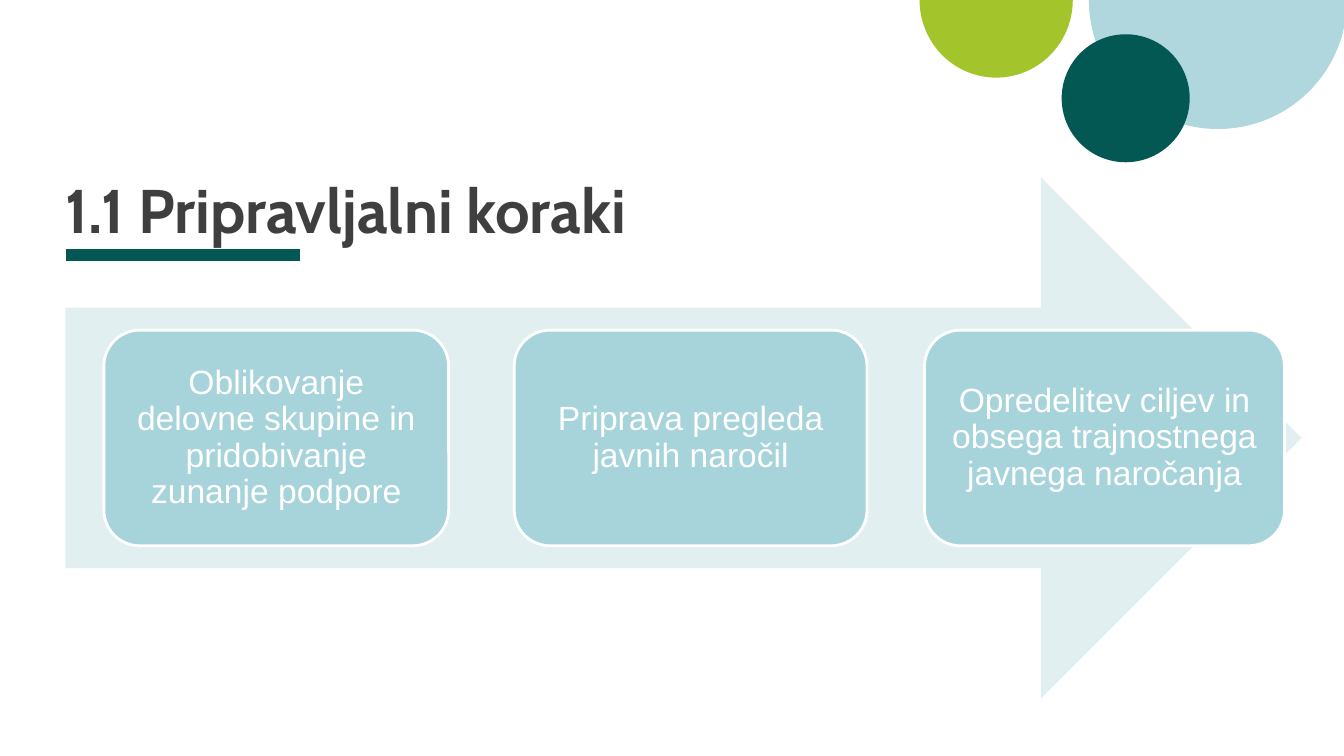
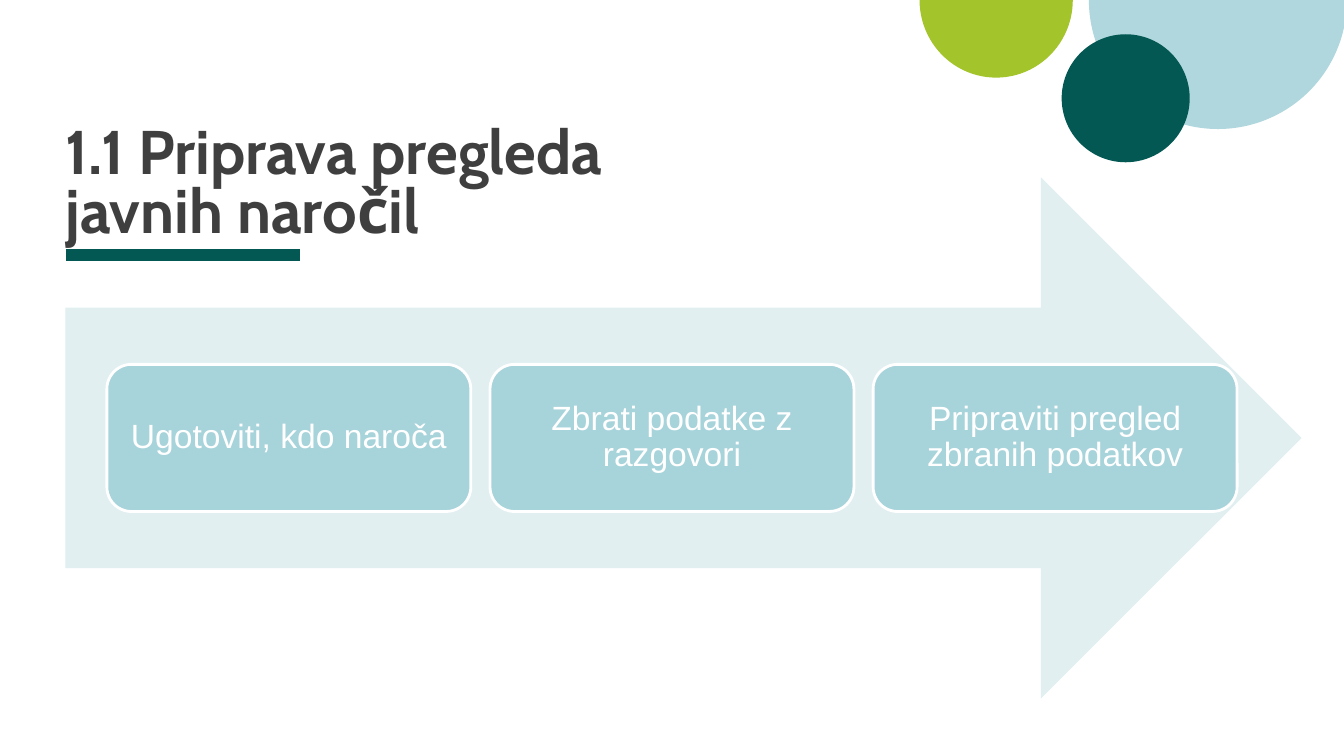
from pptx import Presentation
from pptx.dml.color import RGBColor
from pptx.enum.shapes import MSO_CONNECTOR, MSO_SHAPE
from pptx.enum.text import MSO_ANCHOR, PP_ALIGN
from pptx.oxml.ns import qn
from pptx.util import Inches, Pt
from lxml import etree

STRAIGHT = MSO_CONNECTOR.STRAIGHT
PIE = MSO_SHAPE.PIE
OVAL = MSO_SHAPE.OVAL
RIGHT_ARROW = MSO_SHAPE.RIGHT_ARROW
ROUNDED_RECTANGLE = MSO_SHAPE.ROUNDED_RECTANGLE
LEFT, CENTER = PP_ALIGN.LEFT, PP_ALIGN.CENTER
MIDDLE, BOTTOM = MSO_ANCHOR.MIDDLE, MSO_ANCHOR.BOTTOM

COLORS = {
    "title": "3F3F3F",
    "dark_green": "035854",
    "lime": "A3C42A",
    "pale_blue": "AFD7DD",
    "arrow": "E1EFF1",
    "step": "A7D3DA",
    "white": "FFFFFF",
}
BLANK_LAYOUT = 6
MARGIN_LEFT = 0.65
HALF_TURN = 108  # 180 degrees in adjustment units

SLIDES = [
    {
        "title": "1.1 Pripravljalni koraki",
        "steps": [
            "Oblikovanje delovne skupine in pridobivanje zunanje podpore",
            "Priprava pregleda javnih naročil",
            "Opredelitev ciljev in obsega trajnostnega javnega naročanja",
        ],
        "left": 1.03, "pitch": 4.07, "widths": [3.42, 3.5, 3.57],
        "height": 2.14, "inset": 0.15,
    },
    {
        "title": "1.1 Priprava pregleda\vjavnih naročil",
        "steps": [
            "Ugotoviti, kdo naroča",
            "Zbrati podatke z razgovori",
            "Pripraviti pregled zbranih podatkov",
        ],
        "left": 1.06, "pitch": 3.8, "widths": [3.61] * 3,
        "height": 1.46, "inset": 0.13,
    },
]
ARROW_TOP, ARROW_HEIGHT = 1.76, 5.17


def color(name):
    return RGBColor.from_string(COLORS[name])


def write_text(shape, text, *, font, size, fill, bold=False, align=LEFT,
               anchor=MIDDLE, line_spacing=1.0, inset=0):
    """Fill a shape with one paragraph; a vertical tab breaks the line."""
    frame = shape.text_frame
    frame.word_wrap = True
    frame.vertical_anchor = anchor
    frame.margin_left = frame.margin_right = Inches(inset)
    frame.margin_top = frame.margin_bottom = Inches(inset)
    paragraph = frame.paragraphs[0]
    paragraph.text = text
    paragraph.alignment = align
    paragraph.line_spacing = line_spacing
    for run in paragraph.runs:
        run.font.name = font
        run.font.size = Pt(size)
        run.font.bold = bold
        run.font.color.rgb = color(fill)


def add_shape(slide, kind, left, top, width, height, fill, line=None):
    shape = slide.shapes.add_shape(
        kind, Inches(left), Inches(top), Inches(width), Inches(height))
    shape.shadow.inherit = False
    shape.fill.solid()
    shape.fill.fore_color.rgb = color(fill)
    if line:
        shape.line.color.rgb = color(line)
        shape.line.width = Pt(2)
    else:
        shape.line.fill.background()
    return shape


def add_half_disc(slide, left, width, height, fill):
    """Add the lower half of a disc hanging from the top edge."""
    disc = add_shape(slide, PIE, left, -height / 2, width, height, fill)
    disc.adjustments[0] = 0
    disc.adjustments[1] = HALF_TURN


def add_decoration(slide):
    add_half_disc(slide, 10.8, 2.56, 2.56, "pale_blue")
    add_half_disc(slide, 9.12, 1.52, 1.54, "lime")
    add_shape(slide, OVAL, 10.53, 0.34, 1.27, 1.27, "dark_green")
    underline = slide.shapes.add_connector(
        STRAIGHT, Inches(MARGIN_LEFT), Inches(2.53), Inches(2.98), Inches(2.53))
    underline.line.color.rgb = color("dark_green")
    underline.line.width = Pt(8)
    properties = underline._element.find(qn("p:spPr"))
    etree.SubElement(properties, qn("a:effectLst"))


def add_title(slide, text):
    title = slide.shapes.add_textbox(
        Inches(MARGIN_LEFT), Inches(1.84), Inches(12.09), Inches(0.59))
    write_text(title, text, font="Cabin", size=44, fill="title", bold=True,
               anchor=BOTTOM, line_spacing=0.8)


def add_process(slide, content):
    """Add the wide arrow with the steps centred on its axis."""
    add_shape(slide, RIGHT_ARROW, MARGIN_LEFT, ARROW_TOP, 12.26, ARROW_HEIGHT,
              "arrow")
    height = content["height"]
    top = ARROW_TOP + (ARROW_HEIGHT - height) / 2
    for index, (text, width) in enumerate(zip(content["steps"], content["widths"])):
        left = content["left"] + index * content["pitch"]
        step = add_shape(slide, ROUNDED_RECTANGLE, left, top, width, height,
                         "step", line="white")
        write_text(step, text, font="Arial", size=24, fill="white", align=CENTER,
                   line_spacing=0.9, inset=content["inset"])


def main():
    presentation = Presentation()
    presentation.slide_width = Inches(13.33)
    presentation.slide_height = Inches(7.5)
    for content in SLIDES:
        slide = presentation.slides.add_slide(
            presentation.slide_layouts[BLANK_LAYOUT])
        add_decoration(slide)
        add_process(slide, content)
        add_title(slide, content["title"])
    presentation.save("out.pptx")


if __name__ == "__main__":
    main()
